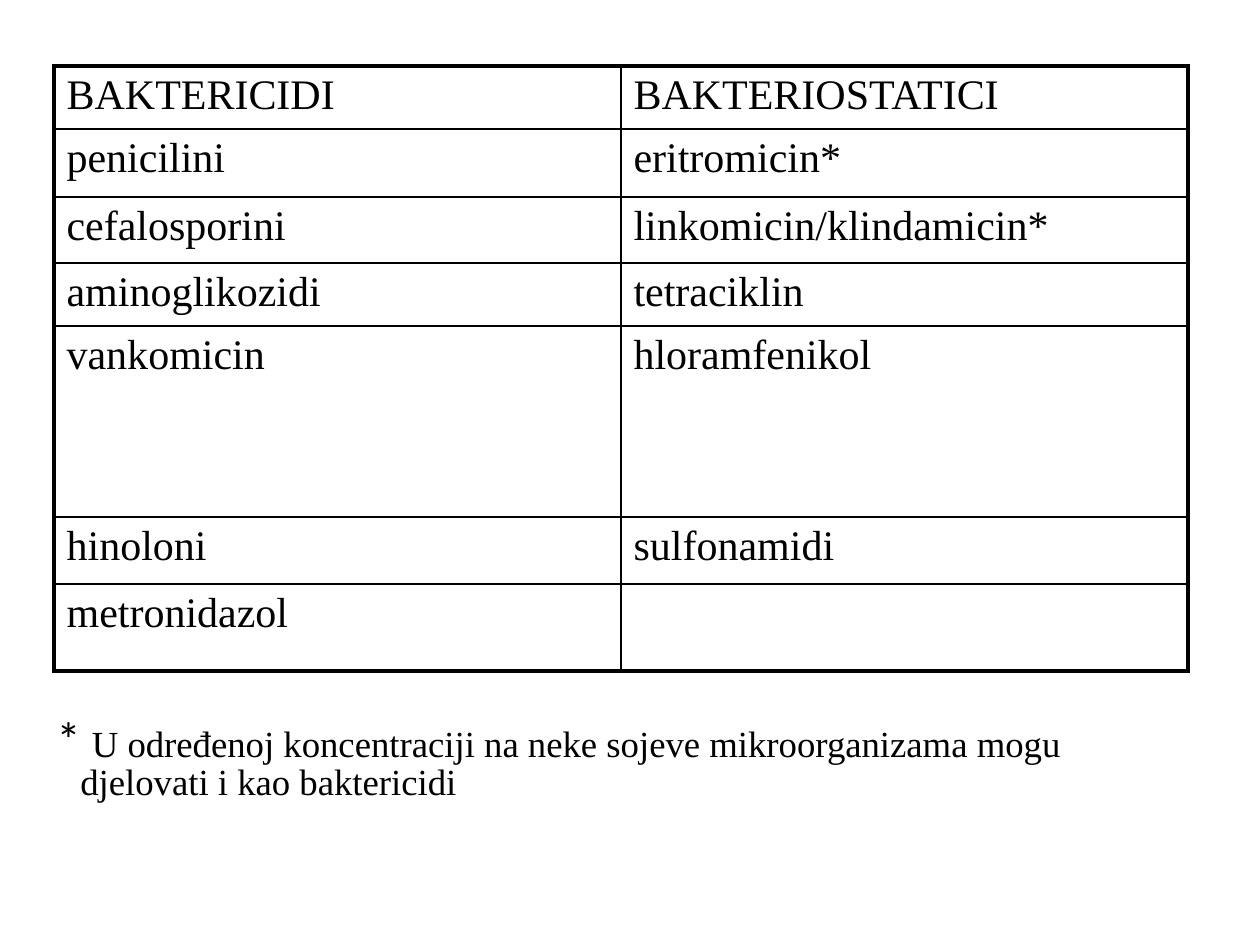
import pptx
import pptx.dml.color
import pptx.oxml
import pptx.oxml.ns
import pptx.util

PX = 914400 // 126

THEME = {
    "ink": "000000",
    "font": "Times New Roman",
    "mark_font": "Calibri",
    "cell_size": 24,
    "note_size": 21,
    "mark_size": 28,
    "outer_line": 2.25,
    "inner_line": 1,
}

ROWS = [
    (63, "BAKTERICIDI", "BAKTERIOSTATICI"),
    (68, "penicilini", "eritromicin*"),
    (66, "cefalosporini", "linkomicin/klindamicin*"),
    (63, "aminoglikozidi", "tetraciklin"),
    (191, "vankomicin", "hloramfenikol"),
    (67, "hinoloni", "sulfonamidi"),
    (87, "metronidazol", ""),
]


class Page:
    def __init__(self, deck, theme):
        self.theme = theme
        self.slide = deck.slides.add_slide(deck.slide_layouts[6])

    def add_span(self, para, text, font, size):
        span = para.add_run()
        span.text = text
        formats = {"name": font, "size": pptx.util.Pt(size)}
        for name, value in formats.items():
            setattr(span.font, name, value)
        span.font.color.rgb = pptx.dml.color.RGBColor.from_string(self.theme["ink"])

    def border(self, cell, sides):
        properties = cell._tc.get_or_add_tcPr()
        for position, (side, outer) in enumerate(sides.items()):
            points = self.theme["outer_line" if outer else "inner_line"]
            line = pptx.oxml.parse_xml(
                f'<a:{side} {pptx.oxml.ns.nsdecls("a")} w="{pptx.util.Pt(points)}">'
                f'<a:solidFill><a:srgbClr val="{self.theme["ink"]}"/></a:solidFill>'
                f"</a:{side}>"
            )
            properties.insert(position, line)

    def table(self, left, top, column_width, rows):
        columns = len(rows[0]) - 1
        height = sum(row[0] for row in rows)
        frame = self.slide.shapes.add_table(
            len(rows), columns, left * PX, top * PX, column_width * columns * PX, height * PX
        )
        table = frame.table
        for name in ("first_row", "horz_banding"):
            setattr(table, name, False)
        for column in table.columns:
            column.width = column_width * PX
        for r, (row_height, *texts) in enumerate(rows):
            table.rows[r].height = row_height * PX
            for c, text in enumerate(texts):
                cell = table.cell(r, c)
                cell.fill.background()
                if text:
                    para = cell.text_frame.paragraphs[0]
                    self.add_span(para, text, self.theme["font"], self.theme["cell_size"])
                self.border(cell, {
                    "lnL": c == 0,
                    "lnR": c == columns - 1,
                    "lnT": r == 0,
                    "lnB": r == len(rows) - 1,
                })

    def footnote(self, left, top, width, height, mark, text):
        box = self.slide.shapes.add_textbox(left * PX, top * PX, width * PX, height * PX)
        box.text_frame.word_wrap = True
        para = box.text_frame.paragraphs[0]
        para.line_spacing = 0.8
        indent = 24 * PX
        for name, value in {"marL": indent, "indent": -indent}.items():
            para._p.get_or_add_pPr().set(name, str(value))
        self.add_span(para, mark, self.theme["mark_font"], self.theme["mark_size"])
        self.add_span(para, text, self.theme["font"], self.theme["note_size"])


def main():
    deck = pptx.Presentation()
    deck.slide_width = 1260 * PX
    deck.slide_height = 945 * PX
    page = Page(deck, THEME)
    page.footnote(
        44, 714, 1134, 105, "* ",
        "U određenoj koncentraciji na neke sojeve mikroorganizama mogu djelovati i kao baktericidi",
    )
    page.table(54, 66, 567, ROWS)
    deck.save("out.pptx")


if __name__ == "__main__":
    main()
